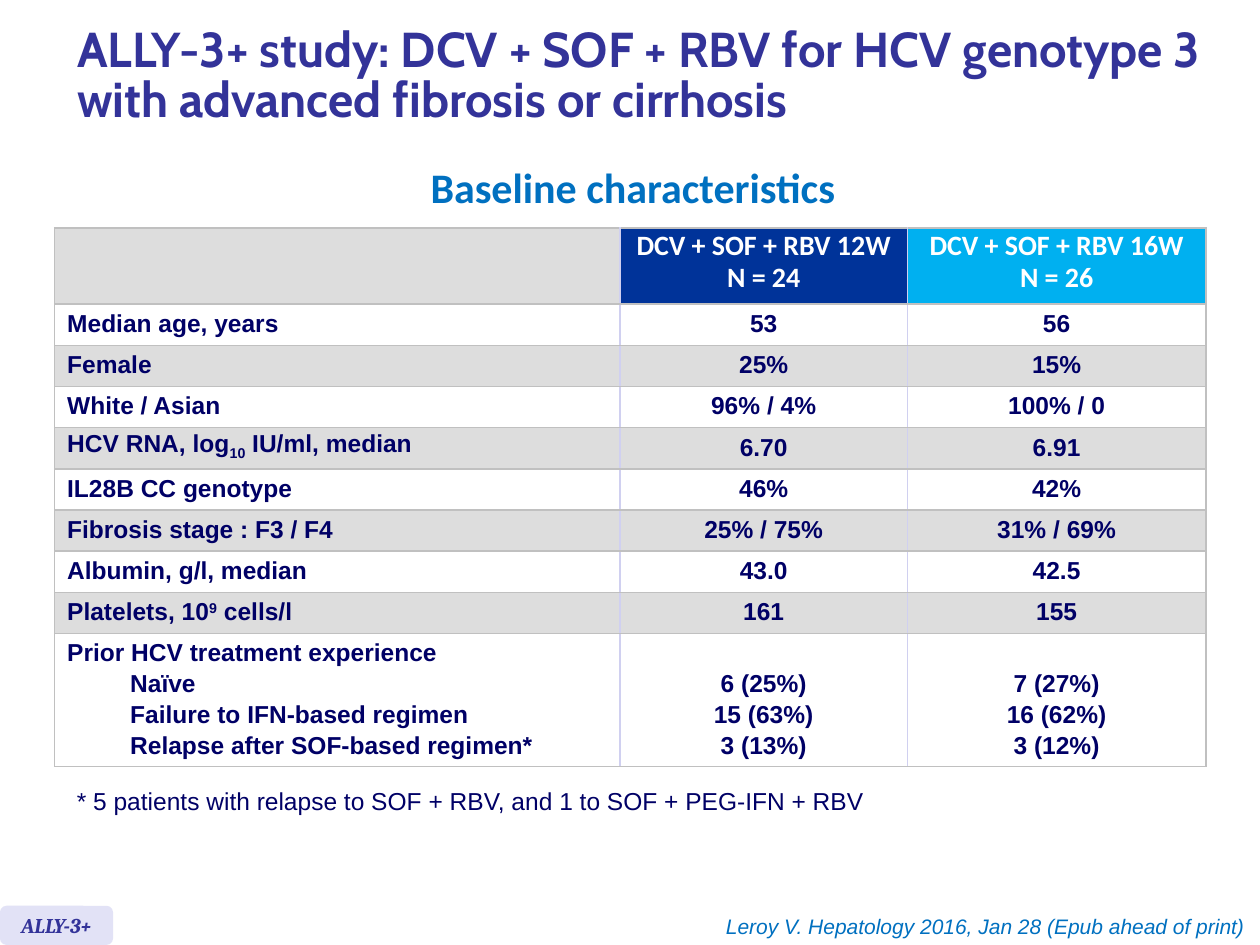
from dataclasses import dataclass
from typing import Any

import lxml.etree
import pptx
import pptx.dml.color
import pptx.enum.shapes
import pptx.enum.text
import pptx.oxml.ns
import pptx.util

Cm = pptx.util.Cm
Pt = pptx.util.Pt
Align = pptx.enum.text.PP_ALIGN
Anchor = pptx.enum.text.MSO_ANCHOR
AutoSize = pptx.enum.text.MSO_AUTO_SIZE

NAVY, INDIGO, BLUE, WHITE = "000066", "333399", "0070C0", "FFFFFF"
STRIPE, GRID, INNER_GRID = "DDDDDD", "C0C0C0", "D0D0F0"


@dataclass(frozen=True)
class Span:
    text: str
    baseline: int = 0


@dataclass(frozen=True)
class Line:
    spans: tuple[Span, ...]
    indent: float = 0


@dataclass(frozen=True)
class Style:
    font: dict[str, Any]
    color: str
    paragraph: dict[str, Any]


@dataclass(frozen=True)
class Place:
    left: float
    top: float
    width: float
    height: float

    def lengths(self) -> tuple[Any, ...]:
        return Cm(self.left), Cm(self.top), Cm(self.width), Cm(self.height)


@dataclass(frozen=True)
class Caption:
    place: Place
    text: str
    style: Style


@dataclass(frozen=True)
class Row:
    label: tuple[Line, ...]
    values: tuple[tuple[Line, ...], ...]
    height: float = 0.83
    anchor: Any = Anchor.MIDDLE


def rgb(value: str) -> pptx.dml.color.RGBColor:
    return pptx.dml.color.RGBColor.from_string(value)


def lines(*texts: str, indent: float = 0) -> tuple[Line, ...]:
    return tuple(Line((Span(text),), indent) for text in texts)


def row(label: str, *values: str) -> Row:
    return Row(lines(label), tuple(lines(value) for value in values))


def apply(target: Any, values: dict[str, Any]) -> None:
    for name, value in values.items():
        setattr(target, name, value)


def write(frame: Any, content: tuple[Line, ...], style: Style, gap: float = 0) -> None:
    for index, line in enumerate(content):
        para = frame.add_paragraph() if index else frame.paragraphs[0]
        apply(para, style.paragraph)
        if index:
            para.space_before = Pt(gap)
        if line.indent:
            para._p.get_or_add_pPr().set("marL", str(Cm(line.indent)))
        for part in line.spans:
            span = para.add_run()
            span.text = part.text
            apply(span.font, style.font)
            span.font.color.rgb = rgb(style.color)
            if part.baseline:
                span._r.get_or_add_rPr().set("baseline", str(part.baseline * 1000))


def draw_caption(page: Any, caption: Caption) -> None:
    frame = page.shapes.add_textbox(*caption.place.lengths()).text_frame
    apply(frame, {"word_wrap": False, "auto_size": AutoSize.SHAPE_TO_FIT_TEXT})
    write(frame, lines(caption.text), caption.style)


def draw_borders(cell: Any, left: str, right: str) -> None:
    properties = cell._tc.get_or_add_tcPr()
    sides = {"lnL": left, "lnR": right, "lnT": GRID, "lnB": GRID}
    for position, (tag, color) in enumerate(sides.items()):
        edge = lxml.etree.Element(pptx.oxml.ns.qn(f"a:{tag}"), w=str(Pt(1)))
        fill = lxml.etree.SubElement(edge, pptx.oxml.ns.qn("a:solidFill"))
        lxml.etree.SubElement(fill, pptx.oxml.ns.qn("a:srgbClr"), val=color)
        properties.insert(position, edge)


def draw_cell(cell: Any, content: tuple[Line, ...], style: Style, fill: str, gap: float) -> None:
    cell.fill.solid()
    cell.fill.fore_color.rgb = rgb(fill)
    write(cell.text_frame, content, style, gap)


def draw_table(page: Any, place: Place, widths: tuple[float, ...], rows: tuple[Row, ...]) -> None:
    table = page.shapes.add_table(len(rows), len(widths), *place.lengths()).table
    apply(table, {"first_row": False, "horz_banding": False})
    for column, width in zip(table.columns, widths):
        column.width = Cm(width)
    last = len(widths) - 1
    for index, entry in enumerate(rows):
        table.rows[index].height = Cm(entry.height)
        stripe = WHITE if index % 2 else STRIPE
        for number, content in enumerate((entry.label, *entry.values)):
            cell = table.cell(index, number)
            cell.vertical_anchor = entry.anchor if number else Anchor.MIDDLE
            if number and not index:
                draw_cell(cell, content, HEADER, ARM_FILLS[number - 1], 3.2)
            else:
                draw_cell(cell, content, VALUE if number else LABEL, stripe, 2.8)
            draw_borders(cell, INNER_GRID if number else GRID, GRID if number == last else INNER_GRID)


def draw_title(page: Any, caption: Caption) -> None:
    title = page.shapes.title
    apply(title, dict(zip(("left", "top", "width", "height"), caption.place.lengths())))
    apply(title.text_frame, {"vertical_anchor": Anchor.MIDDLE, "auto_size": AutoSize.NONE, "word_wrap": True})
    write(title.text_frame, lines(caption.text), caption.style)


def draw_badge(page: Any, caption: Caption) -> None:
    badge = page.shapes.add_shape(pptx.enum.shapes.MSO_SHAPE.ROUNDED_RECTANGLE, *caption.place.lengths())
    badge.shadow.inherit = False
    badge.fill.solid()
    badge.fill.fore_color.rgb = rgb("E2E2F6")
    badge.line.fill.background()
    apply(badge.text_frame, {"vertical_anchor": Anchor.MIDDLE, "word_wrap": False})
    write(badge.text_frame, lines(caption.text), caption.style)


def font(name: str, size: int, bold: bool = False, italic: bool = False) -> dict[str, Any]:
    return {"name": name, "size": Pt(size), "bold": bold, "italic": italic}


TIGHT = {"line_spacing": Pt(15)}
CENTERED = {"alignment": Align.CENTER}
LABEL = Style(font("Arial", 14, bold=True), NAVY, TIGHT)
VALUE = Style(font("Arial", 14, bold=True), NAVY, TIGHT | CENTERED)
HEADER = Style(font("Calibri", 16, bold=True), WHITE, TIGHT | CENTERED)
ARM_FILLS = ("003399", "00B0F0")

TITLE = Caption(
    Place(1.3, 0.2, 23.19, 2.72),
    "ALLY-3+ study: DCV + SOF + RBV for HCV genotype 3 with advanced fibrosis or cirrhosis",
    Style(font("Cabin", 28, bold=True), INDIGO, {"alignment": Align.LEFT, "line_spacing": 0.85}),
)
BADGE = Caption(
    Place(0, 18.26, 2.28, 0.79), "ALLY-3+",
    Style(font("Cambria", 12, bold=True, italic=True), INDIGO, CENTERED),
)
CAPTIONS = (
    Caption(Place(8.38, 3.61, 8.76, 0.89), "Baseline characteristics",
            Style(font("Calibri", 24, bold=True), BLUE, CENTERED | {"line_spacing": Pt(15.2)})),
    Caption(Place(1.3, 15.72, 16.46, 0.86),
            "* 5 patients with relapse to SOF + RBV, and 1 to SOF + PEG-IFN + RBV",
            Style(font("Arial", 14), NAVY, {})),
    Caption(Place(14.3, 18.29, 11.05, 0.76), "Leroy V. Hepatology 2016, Jan 28 (Epub ahead of print)",
            Style(font("Arial", 12, italic=True), BLUE, {"alignment": Align.RIGHT})),
)
ROWS = (
    Row((), (lines("DCV + SOF + RBV 12W", "N = 24"), lines("DCV + SOF + RBV 16W", "N = 26")), 1.53),
    row("Median age, years", "53", "56"),
    row("Female", "25%", "15%"),
    row("White / Asian", "96% / 4%", "100% / 0"),
    Row((Line((Span("HCV RNA, log"), Span("10", -25), Span(" IU/ml, median"))),),
        (lines("6.70"), lines("6.91"))),
    row("IL28B CC genotype", "46%", "42%"),
    row("Fibrosis stage : F3 / F4", "25% / 75%", "31% / 69%"),
    row("Albumin, g/l, median", "43.0", "42.5"),
    Row((Line((Span("Platelets, 10"), Span("9", 30), Span(" cells/l"))),), (lines("161"), lines("155"))),
    Row(lines("Prior HCV treatment experience")
        + lines("Naïve", "Failure to IFN-based regimen", "Relapse after SOF-based regimen*", indent=1.27),
        (lines("6 (25%)", "15 (63%)", "3 (13%)"), lines("7 (27%)", "16 (62%)", "3 (12%)")),
        2.68, Anchor.BOTTOM),
)


def main() -> None:
    deck = pptx.Presentation()
    apply(deck, {"slide_width": Cm(25.4), "slide_height": Cm(19.05)})
    page = deck.slides.add_slide(deck.slide_layouts.get_by_name("Title Only"))
    draw_title(page, TITLE)
    draw_table(page, Place(1.1, 4.6, 23.21, 10.85), (11.4, 5.79, 6.02), ROWS)
    for caption in CAPTIONS:
        draw_caption(page, caption)
    draw_badge(page, BADGE)
    deck.save("out.pptx")


if __name__ == "__main__":
    main()
